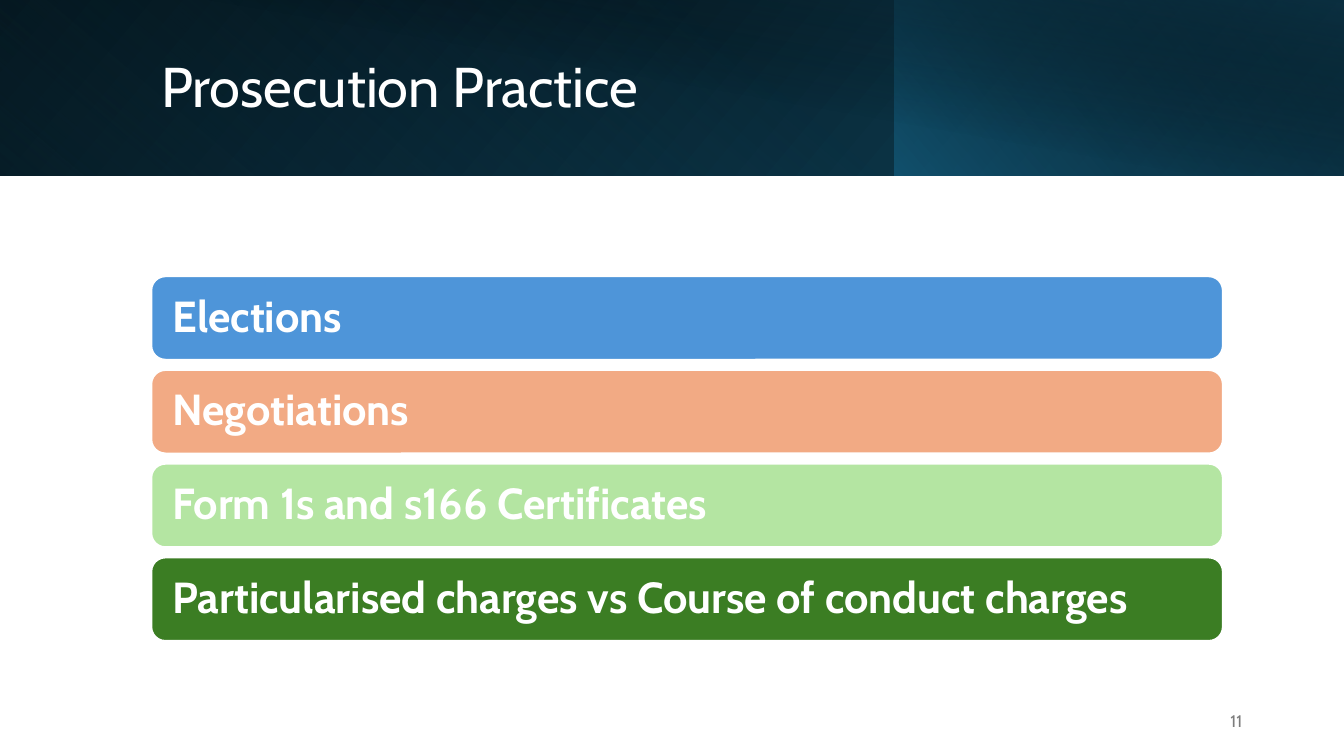
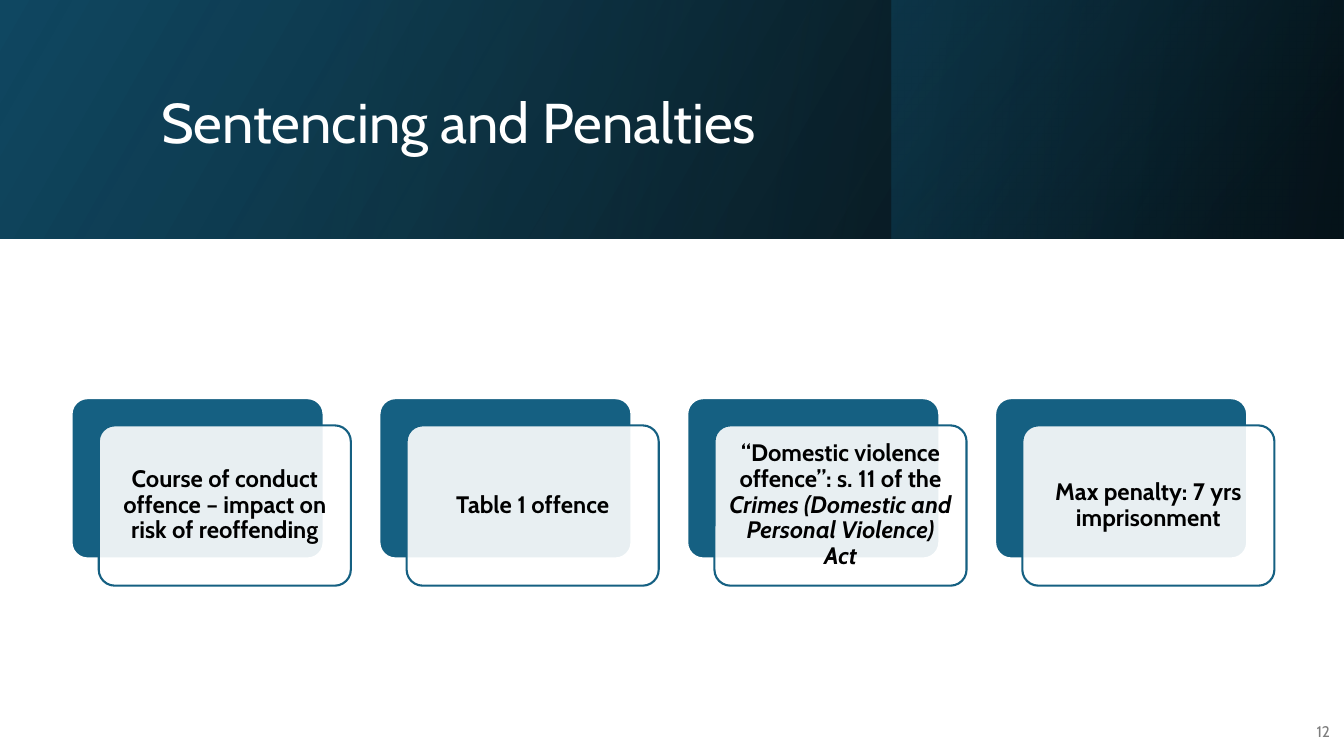
from pptx import Presentation
from pptx.dml.color import RGBColor
from pptx.enum.shapes import MSO_SHAPE as Shape
from pptx.enum.text import MSO_ANCHOR as Anchor, PP_ALIGN as Align
from pptx.oxml.ns import qn
from pptx.util import Inches, Pt
from lxml.etree import SubElement

WHITE = RGBColor(0xFF, 0xFF, 0xFF)
BLACK = RGBColor(0, 0, 0)
TEAL = RGBColor(0x15, 0x60, 0x82)
DEEP = RGBColor(0x10, 0x48, 0x62)
NIGHT = RGBColor(0x0B, 0x30, 0x41)
BLUE = RGBColor(0x4E, 0x95, 0xD9)
PEACH = RGBColor(0xF2, 0xAA, 0x84)
MINT = RGBColor(0xB4, 0xE5, 0xA2)
GREEN = RGBColor(0x3B, 0x7D, 0x23)
GREY = RGBColor(0x7D, 0x7D, 0x7D)

FONT = "Cabin"
WIDTH = 13.33


def fade(shape, *alphas):
    """Set the opacity, in percent, of each fill colour in turn."""
    tones = shape.element.spPr.iter(qn("a:srgbClr"))
    for alpha, tone in zip(alphas, tones):
        SubElement(tone, qn("a:alpha"), val=str(alpha * 1000))


class Deck:
    def __init__(self):
        self.prs = Presentation()
        self.prs.slide_width = Inches(WIDTH)
        self.prs.slide_height = Inches(7.5)
        self.slide = None

    def new(self):
        self.slide = self.prs.slides.add_slide(self.prs.slide_layouts[6])

    def shape(self, kind, x, y, w, h):
        box = self.slide.shapes.add_shape(
            kind, Inches(x), Inches(y), Inches(w), Inches(h))
        box.shadow.inherit = False
        return box

    def band(self, x, w, h, angle, *stops):
        """Draw a top band; each stop is (position, colour, opacity)."""
        box = self.shape(Shape.RECTANGLE, x, 0, w, h)
        box.line.fill.background()
        box.fill.gradient()
        box.fill.gradient_angle = angle
        for mark, (pos, tone, _) in zip(box.fill.gradient_stops, stops):
            mark.position = pos / 100
            mark.color.rgb = tone
        fade(box, *(alpha for _, _, alpha in stops))

    def card(self, x, y, w, h, fill, line, curve=0.1):
        box = self.shape(Shape.ROUNDED_RECTANGLE, x, y, w, h)
        box.adjustments[0] = curve
        box.fill.solid()
        box.fill.fore_color.rgb = fill
        box.line.color.rgb = line
        box.line.width = Pt(1.5)
        return box

    def label(self, box, runs, size, tone, align=Align.LEFT, bold=False,
              inset=0.1, lead=0.9):
        """Fill a box with one paragraph; each run is (text, italic)."""
        frame = box.text_frame
        frame.word_wrap = True
        frame.vertical_anchor = Anchor.MIDDLE
        frame.margin_left = frame.margin_right = Inches(inset)
        para = frame.paragraphs[0]
        para.alignment = align
        para.line_spacing = lead
        font = para.font
        font.name, font.size, font.bold = FONT, Pt(size), bold
        font.color.rgb = tone
        for text, slant in runs:
            run = para.add_run()
            run.text = text
            if slant:
                run.font.italic = True

    def text(self, x, y, w, h, text, size, tone, **style):
        box = self.slide.shapes.add_textbox(
            Inches(x), Inches(y), Inches(w), Inches(h))
        self.label(box, [(text, False)], size, tone, **style)

    def title(self, y, h, text):
        self.text(1.5, y, 10.7, h, text, 40, WHITE)

    def number(self, x, y, w, text, size):
        self.text(x, y, w, 0.4, text, size, GREY, align=Align.RIGHT, lead=1)

    def save(self):
        self.prs.save("out.pptx")


def practice(deck):
    deck.new()
    high, split = 1.74, 8.87
    deck.band(0, WIDTH, high, 320, (0, BLACK, 100), (100, DEEP, 100))
    deck.band(0, split, high, 230, (20, TEAL, 0), (100, NIGHT, 55))
    deck.band(split, WIDTH - split, high, 40, (0, TEAL, 66), (100, BLACK, 30))
    deck.band(0.5, WIDTH - 0.5, high, 80, (50, BLACK, 0), (99, NIGHT, 52))
    deck.title(0.32, 1.13, "Prosecution Practice")
    bars = [
        ("Elections", BLUE),
        ("Negotiations", PEACH),
        ("Form 1s and s166 Certificates", MINT),
        ("Particularised charges vs Course of conduct charges", GREEN),
    ]
    for i, (text, fill) in enumerate(bars):
        bar = deck.card(1.5, 2.74 + 0.93 * i, 10.63, 0.83, fill, WHITE, 0.17)
        deck.label(bar, [(text, False)], 31, WHITE, bold=True, inset=0.17)
    deck.number(9.42, 6.95, 3, "11", 12)


def penalties(deck):
    deck.new()
    high, split = 2.37, 8.84
    deck.band(0, WIDTH, high, 150, (0, BLACK, 96), (100, DEEP, 100))
    deck.band(split, WIDTH - split, high, 140, (19, NIGHT, 68), (100, TEAL, 48))
    deck.band(0, WIDTH, high, 350, (23, DEEP, 16), (99, BLACK, 45))
    deck.title(0.38, 1.72, "Sentencing and Penalties")
    deck.number(12.8, 7.06, 0.49, "12", 11)
    cards = [
        [("Course of conduct offence – impact on risk of reoffending", False)],
        [("Table 1 offence", False)],
        [("“Domestic violence offence”: s. 11 of the ", False),
         ("Crimes (Domestic and Personal Violence) Act", True)],
        [("Max penalty: 7 yrs imprisonment", False)],
    ]
    wide, tall, shift = 2.5, 1.59, 0.27
    left, right = 0.71, 9.87
    step = (right - left) / (len(cards) - 1)
    for i, runs in enumerate(cards):
        x, y = left + step * i, 3.95
        deck.card(x, y, wide, tall, TEAL, WHITE)
        front = deck.card(x + shift, y + shift, wide, tall, WHITE, TEAL)
        fade(front, 90)
        deck.label(front, runs, 17, BLACK, align=Align.CENTER, bold=True)


def main():
    deck = Deck()
    practice(deck)
    penalties(deck)
    deck.save()


if __name__ == "__main__":
    main()
